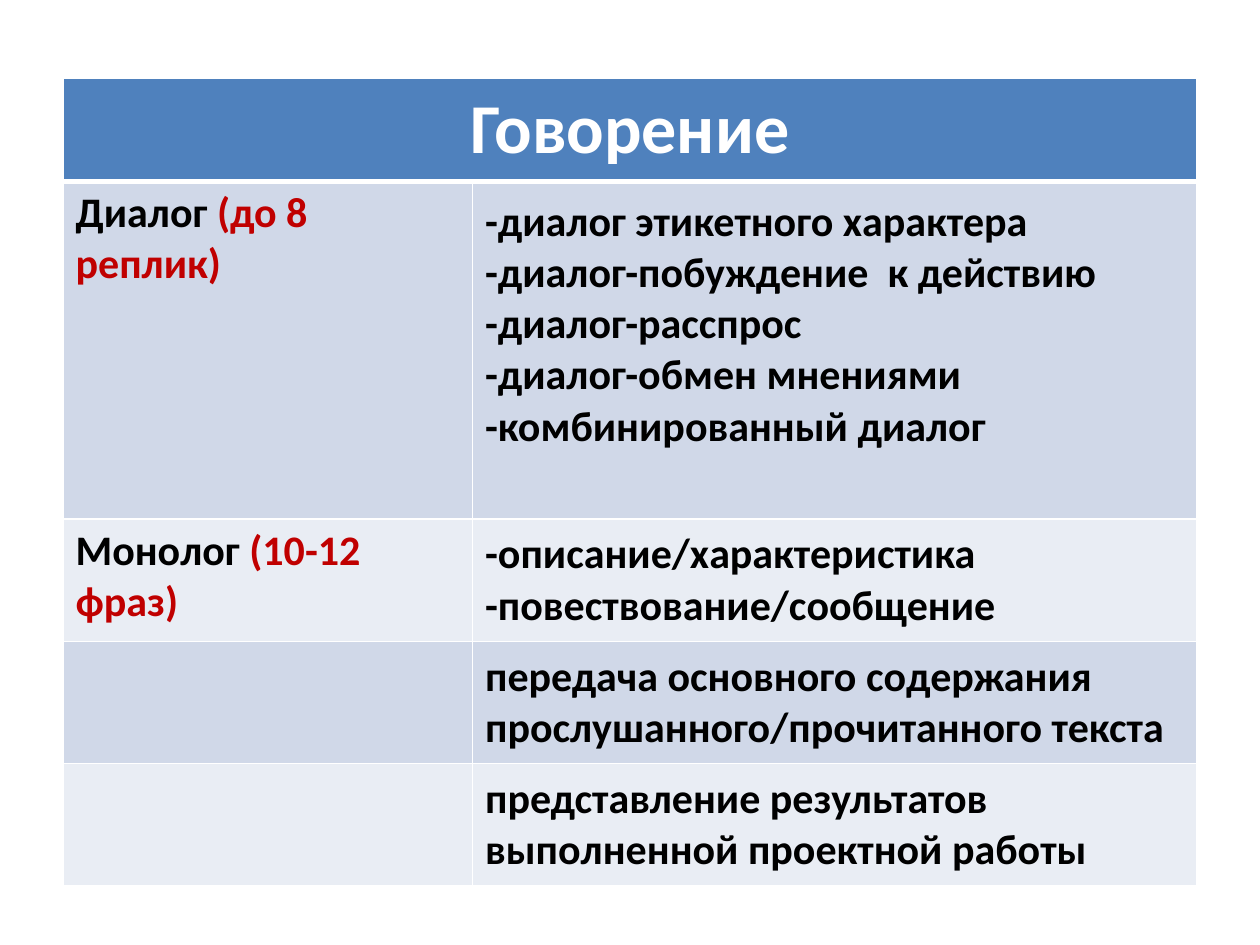
from dataclasses import dataclass

from lxml import etree
from pptx import Presentation
from pptx.dml.color import RGBColor
from pptx.enum.text import MSO_ANCHOR, PP_ALIGN
from pptx.oxml.ns import qn
from pptx.util import Inches, Pt

TOP, MIDDLE = MSO_ANCHOR.TOP, MSO_ANCHOR.MIDDLE
LEFT, CENTER = PP_ALIGN.LEFT, PP_ALIGN.CENTER
BLANK_LAYOUT = 6


@dataclass(frozen=True)
class Theme:
    font: str = "Calibri"
    title_size: int = 40
    body_size: int = 24
    white: str = "FFFFFF"
    black: str = "000000"
    accent: str = "C00000"
    header: str = "4F81BD"
    bands: tuple = ("D0D8E8", "E9EDF4")
    thin: int = 1
    thick: int = 3


TITLE = "Говорение"
# Each row: topic, its volume in the accent colour, lines of the right column
ROWS = [
    ("Диалог ", "(до 8 реплик)", [
        "-диалог этикетного характера",
        "-диалог-побуждение  к действию",
        "-диалог-расспрос",
        "-диалог-обмен мнениями",
        "-комбинированный диалог",
    ]),
    ("Монолог ", "(10-12 фраз)", [
        "-описание/характеристика",
        "-повествование/сообщение",
    ]),
    ("", "", ["передача основного содержания прослушанного/прочитанного текста"]),
    ("", "", ["представление результатов выполненной проектной работы"]),
]
COL_WIDTHS = [3.25, 5.75]
ROW_HEIGHTS = [0.82, 2.68, 0.97, 0.97, 0.97]
DIALOGUE_BOTTOM_MARGIN = 0.46


class SlideBuilder:
    def __init__(self, slide, theme):
        self.slide = slide
        self.theme = theme

    def table(self, left, top, col_widths, row_heights):
        frame = self.slide.shapes.add_table(
            len(row_heights), len(col_widths), Inches(left), Inches(top),
            Inches(sum(col_widths)), Inches(sum(row_heights)))
        table = frame.table
        for column, width in zip(table.columns, col_widths):
            column.width = Inches(width)
        for row, height in zip(table.rows, row_heights):
            row.height = Inches(height)
        return table

    def borders(self, cell, **widths):
        """Draw all four sides; widths overrides the thin line by side."""
        tc_pr = cell._tc.get_or_add_tcPr()
        for side in ("lnL", "lnR", "lnT", "lnB"):
            width = Pt(widths.get(side, self.theme.thin))
            ln = etree.SubElement(tc_pr, qn(f"a:{side}"), w=str(width))
            fill = etree.SubElement(ln, qn("a:solidFill"))
            etree.SubElement(fill, qn("a:srgbClr"), val=self.theme.white)

    def cell(self, cell, fill, paragraphs=(), size=None, anchor=TOP,
             align=LEFT, **border_widths):
        """Style a cell; each paragraph is a list of (text, colour) runs."""
        self.borders(cell, **border_widths)
        cell.fill.solid()
        cell.fill.fore_color.rgb = RGBColor.from_string(fill)
        cell.vertical_anchor = anchor
        tf = cell.text_frame
        style = {"name": self.theme.font, "bold": True,
                 "size": Pt(size or self.theme.body_size)}
        for i, runs in enumerate(paragraphs):
            p = tf.add_paragraph() if i else tf.paragraphs[0]
            p.alignment = align
            for text, color in runs:
                r = p.add_run()
                r.text = text
                for name, value in style.items():
                    setattr(r.font, name, value)
                r.font.color.rgb = RGBColor.from_string(color)


def main():
    theme = Theme()
    prs = Presentation()
    prs.slide_width, prs.slide_height = Inches(10), Inches(7.5)
    s = prs.slides.add_slide(prs.slide_layouts[BLANK_LAYOUT])
    builder = SlideBuilder(s, theme)

    table = builder.table(0.5, 0.62, COL_WIDTHS, ROW_HEIGHTS)
    title, title_rest = table.cell(0, 0), table.cell(0, 1)
    title.merge(title_rest)
    builder.cell(title, theme.header, [[(TITLE, theme.white)]],
                 theme.title_size, MIDDLE, CENTER, lnB=theme.thick)
    builder.cell(title_rest, theme.header, lnB=theme.thick)

    for row, (topic, volume, lines) in enumerate(ROWS, start=1):
        fill = theme.bands[(row - 1) % 2]
        top_border = theme.thick if row == 1 else theme.thin
        label = [[(topic, theme.black), (volume, theme.accent)]] if topic else []
        content = [[(line, theme.black)] for line in lines]
        builder.cell(table.cell(row, 0), fill, label, lnT=top_border)
        builder.cell(table.cell(row, 1), fill, content, anchor=MIDDLE,
                     lnT=top_border)
    table.cell(1, 1).margin_bottom = Inches(DIALOGUE_BOTTOM_MARGIN)

    prs.save("out.pptx")


if __name__ == "__main__":
    main()
